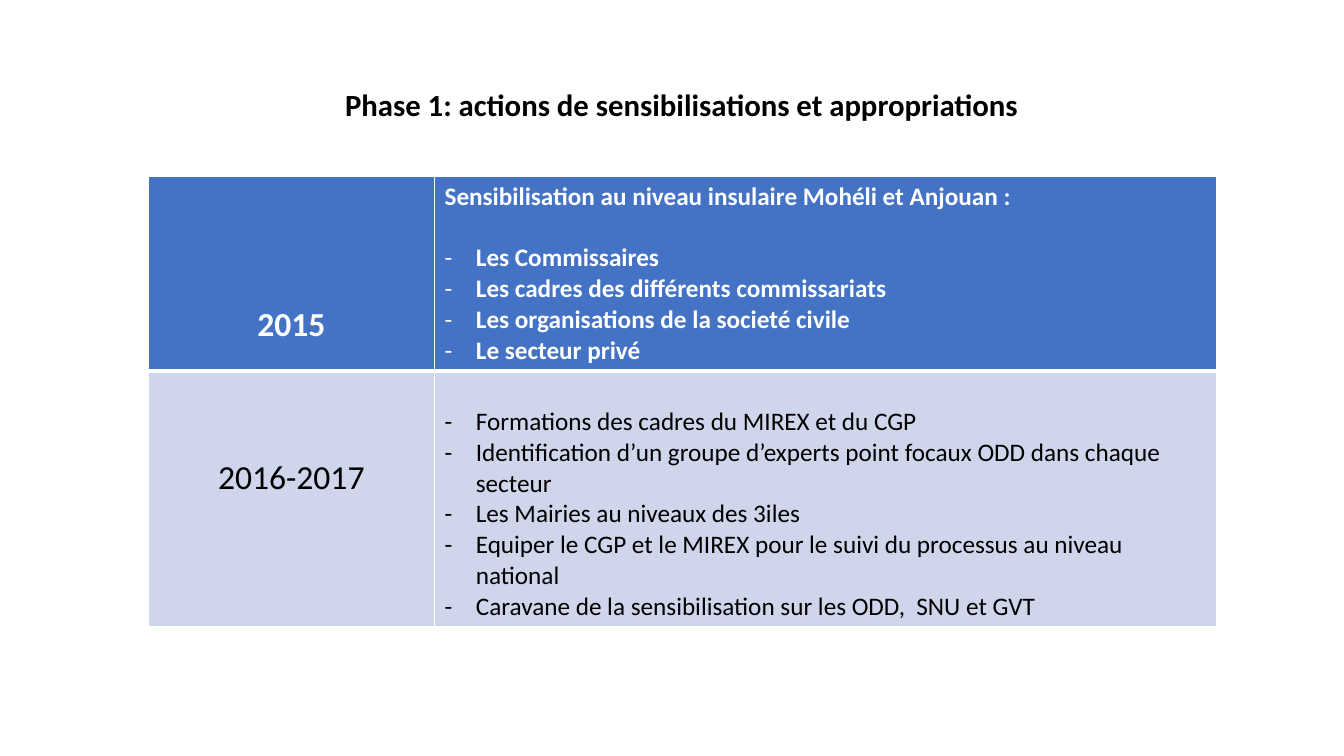
from dataclasses import dataclass

from lxml import etree
from pptx import Presentation
from pptx import util as u
from pptx.dml.color import RGBColor
from pptx.enum import text
from pptx.oxml.ns import qn


@dataclass(frozen=True)
class Theme:
    font: str = "Calibri"
    black: str = "000000"
    white: str = "FFFFFF"
    blue: str = "4472C4"
    pale_blue: str = "CFD5EA"
    title_size: int = 22
    year_size: int = 24
    body_size: int = 18


theme = Theme()
LINE_SPACING = 1.22
CELL_INSET = 0.05
BULLET_INDENT = u.Inches(0.31)


def style(para, size, color, bold):
    for span in para.runs:
        span.font.name = theme.font
        span.font.size = u.Pt(size)
        span.font.bold = bold
        span.font.color.rgb = RGBColor.from_string(color)


def add_borders(cell, widths):
    """Draw white cell borders; widths maps side letters to points."""
    properties = cell._tc.get_or_add_tcPr()
    for side, width in widths.items():
        line = etree.SubElement(properties, qn(f"a:ln{side}"), w=str(u.Pt(width)))
        fill = etree.SubElement(line, qn("a:solidFill"))
        etree.SubElement(fill, qn("a:srgbClr"), val=theme.white)


deck = Presentation()
deck.slide_width, deck.slide_height = u.Inches(13.33), u.Inches(7.5)
slide = deck.slides.add_slide(deck.slide_layouts[6])

# Title
title = slide.shapes.add_textbox(
    u.Inches(0.73), u.Inches(0.49), u.Inches(12.06), u.Inches(1.13)
).text_frame
title.word_wrap = True
title.vertical_anchor = text.MSO_ANCHOR.MIDDLE
title.text = "Phase 1: actions de sensibilisations et appropriations"
title.paragraphs[0].alignment = text.PP_ALIGN.CENTER
title.paragraphs[0].line_spacing = 0.9
style(title.paragraphs[0], theme.title_size, theme.black, True)

# Each phase: year, lines above the year, heading, lines above the actions,
# actions, fill, text colour, bold, row height, borders
phases = [
    ("2015", 3, "Sensibilisation au niveau insulaire Mohéli et Anjouan :", 0,
     ["Les Commissaires",
      "Les cadres des différents commissariats",
      "Les organisations de la societé civile",
      "Le secteur privé"],
     theme.blue, theme.white, True, 1.93, {"L": 1, "R": 1, "T": 1, "B": 3}),
    ("2016-2017", 2, None, 1,
     ["Formations des cadres du MIREX et du CGP",
      "Identification d’un groupe d’experts point focaux ODD dans chaque secteur",
      "Les Mairies au niveaux des 3iles",
      "Equiper le CGP et le MIREX pour le suivi du processus au niveau national",
      "Caravane de la sensibilisation sur les ODD,  SNU et GVT"],
     theme.pale_blue, theme.black, False, 2.54, {"L": 1, "R": 1, "T": 3, "B": 1}),
]

# Table of phases
table = slide.shapes.add_table(
    len(phases), 2, u.Inches(1.47), u.Inches(1.75), u.Inches(10.6), u.Inches(4.47)
).table
for column, width in zip(table.columns, (2.84, 7.76)):
    column.width = u.Inches(width)

for row, phase in zip(table.rows, phases):
    year, year_drop, heading, action_drop, actions, fill, color, bold, height, borders = phase
    row.height = u.Inches(height)
    year_cell, action_cell = row.cells
    for cell, drop, size in ((year_cell, year_drop, theme.year_size),
                             (action_cell, action_drop, theme.body_size)):
        add_borders(cell, borders)
        cell.fill.solid()
        cell.fill.fore_color.rgb = RGBColor.from_string(fill)
        cell.margin_top = u.Inches(CELL_INSET) + u.Pt(drop * size * LINE_SPACING)

    year_cell.text_frame.text = year
    year_para = year_cell.text_frame.paragraphs[0]
    year_para.alignment = text.PP_ALIGN.CENTER
    style(year_para, theme.year_size, color, bold)

    lines = ([heading] if heading else []) + actions
    action_cell.text_frame.text = "\n".join(lines)
    for para in action_cell.text_frame.paragraphs:
        style(para, theme.body_size, color, bold)
        if para.text == heading:
            para.space_after = u.Pt(theme.body_size * LINE_SPACING)
        else:
            properties = para._p.get_or_add_pPr()
            properties.set("marL", str(BULLET_INDENT))
            properties.set("indent", str(-BULLET_INDENT))
            etree.SubElement(properties, qn("a:buFont"), typeface=theme.font)
            etree.SubElement(properties, qn("a:buChar"), char="-")

deck.save("out.pptx")
